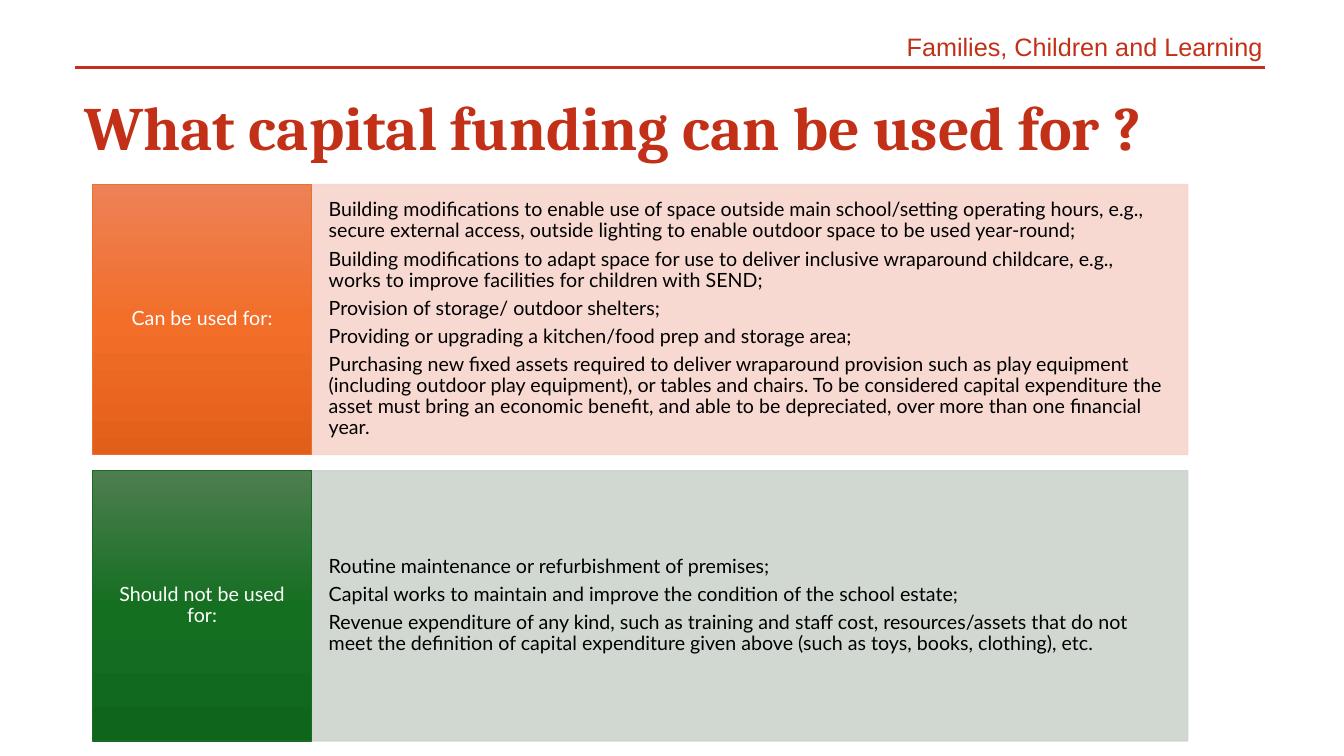
from lxml import etree
from pptx import Presentation
from pptx.dml.color import RGBColor
from pptx.enum.shapes import MSO_CONNECTOR, MSO_SHAPE
from pptx.enum.text import MSO_ANCHOR, PP_ALIGN
from pptx.oxml.ns import qn
from pptx.util import Inches, Pt

RECTANGLE = MSO_SHAPE.RECTANGLE
STRAIGHT = MSO_CONNECTOR.STRAIGHT
TOP, MIDDLE = MSO_ANCHOR.TOP, MSO_ANCHOR.MIDDLE
LEFT, CENTER, RIGHT = PP_ALIGN.LEFT, PP_ALIGN.CENTER, PP_ALIGN.RIGHT

RED = "C13017"
LABEL_LEFT, LABEL_WIDTH = 0.92, 2.17
DETAIL_WIDTH = 8.69
FIRST_TOP, ROW_HEIGHT, ROW_STEP = 1.83, 2.68, 2.84

ROWS = [
    {
        "label": "Can be used for:",
        "gradient": ["ED8257", "F26E29", "E25F1A"],
        "outline": "E97132",
        "tint": "F7D5CE",
        "details": [
            "Building modifications to enable use of space outside main school/setting operating "
            "hours, e.g., secure external access, outside lighting to enable outdoor space to be "
            "used year-round;",
            "Building modifications to adapt space for use to deliver inclusive wraparound "
            "childcare, e.g., works to improve facilities for children with SEND;",
            "Provision of storage/ outdoor shelters;",
            "Providing or upgrading a kitchen/food prep and storage area;",
            "Purchasing new fixed assets required to deliver wraparound provision such as play "
            "equipment (including outdoor play equipment), or tables and chairs. To be considered "
            "capital expenditure the asset must bring an economic benefit, and able to be "
            "depreciated, over more than one financial year.",
        ],
    },
    {
        "label": "Should not be used for:",
        "gradient": ["4D7E50", "156F21", "0F661B"],
        "outline": "196B24",
        "tint": "CCD4CD",
        "details": [
            "Routine maintenance or refurbishment of premises;",
            "Capital works to maintain and improve the condition of the school estate;",
            "Revenue expenditure of any kind, such as training and staff cost, resources/assets "
            "that do not meet the definition of capital expenditure given above (such as toys, "
            "books, clothing), etc.",
        ],
    },
]


def color(value):
    return RGBColor.from_string(value)


def write_text(box, paragraphs, font, para_format, anchor=TOP, margin=0.1):
    frame = box.text_frame
    frame.word_wrap = True
    frame.vertical_anchor = anchor
    frame.margin_left = frame.margin_right = Inches(margin)
    for index, text in enumerate(paragraphs):
        para = frame.paragraphs[0] if index == 0 else frame.add_paragraph()
        for name, value in para_format.items():
            setattr(para, name, value)
        span = para.add_run()
        span.text = text
        for name, value in font.items():
            if name == "color":
                span.font.color.rgb = color(value)
            else:
                setattr(span.font, name, value)


def add_text(page, position, text, font, para_format):
    box = page.shapes.add_textbox(*map(Inches, position))
    write_text(box, [text], font, para_format)


def add_panel(page, position, fill, outline):
    panel = page.shapes.add_shape(RECTANGLE, *map(Inches, position))
    panel.shadow.inherit = False
    panel.fill.solid()
    panel.fill.fore_color.rgb = color(fill)
    panel.line.color.rgb = color(outline)
    panel.line.width = Pt(1)
    return panel


def set_opacity(panel, percent):
    for solid in panel.element.spPr.iter(qn("a:solidFill")):
        etree.SubElement(solid[0], qn("a:alpha"), val=str(percent * 1000))


def set_gradient(panel, colors):
    """Replace the solid fill with evenly spaced stops, top to bottom."""
    gradient = etree.Element(qn("a:gradFill"), rotWithShape="1")
    stops = etree.SubElement(gradient, qn("a:gsLst"))
    for index, value in enumerate(colors):
        offset = 100000 * index // (len(colors) - 1)
        stop = etree.SubElement(stops, qn("a:gs"), pos=str(offset))
        etree.SubElement(stop, qn("a:srgbClr"), val=value)
    etree.SubElement(gradient, qn("a:lin"), ang="5400000", scaled="0")
    properties = panel.element.spPr
    properties.replace(properties.find(qn("a:solidFill")), gradient)


def add_rule(page, start, end, line_color, width):
    rule = page.shapes.add_connector(STRAIGHT, *map(Inches, start + end))
    rule.line.color.rgb = color(line_color)
    rule.line.width = Pt(width)
    etree.SubElement(rule.element.spPr, qn("a:effectLst"))


def add_row(page, top, row):
    font = {"name": "Lato", "size": Pt(14)}
    spacing = {"line_spacing": 0.9, "space_after": Pt(4.9)}

    detail_left = LABEL_LEFT + LABEL_WIDTH
    detail = add_panel(page, (detail_left, top, DETAIL_WIDTH, ROW_HEIGHT), row["tint"], row["tint"])
    set_opacity(detail, 90)
    write_text(detail, row["details"], font | {"color": "000000"},
               spacing | {"alignment": LEFT}, MIDDLE, 0.17)

    label = add_panel(page, (LABEL_LEFT, top, LABEL_WIDTH, ROW_HEIGHT),
                      row["gradient"][1], row["outline"])
    set_gradient(label, row["gradient"])
    write_text(label, [row["label"]], font | {"color": "FFFFFF"},
               spacing | {"alignment": CENTER}, MIDDLE, 0.11)


def main():
    deck = Presentation()
    deck.slide_width, deck.slide_height = Inches(13.33), Inches(7.5)
    page = deck.slides.add_slide(deck.slide_layouts[6])

    # Funding rows
    for index, row in enumerate(ROWS):
        add_row(page, FIRST_TOP + index * ROW_STEP, row)

    # Header and title
    add_text(page, (0.74, 0.26, 11.88, 0.4), "Families, Children and Learning",
             {"name": "Arial", "size": Pt(18), "color": RED}, {"alignment": RIGHT})
    add_rule(page, (0.74, 0.67), (12.55, 0.67), RED, 2)
    add_text(page, (0.74, 0.92, 12.41, 0.68), "What capital funding can be used for ?",
             {"name": "Cambria", "size": Pt(44), "bold": True, "color": RED},
             {"line_spacing": 0.9})

    deck.save("out.pptx")


if __name__ == "__main__":
    main()
